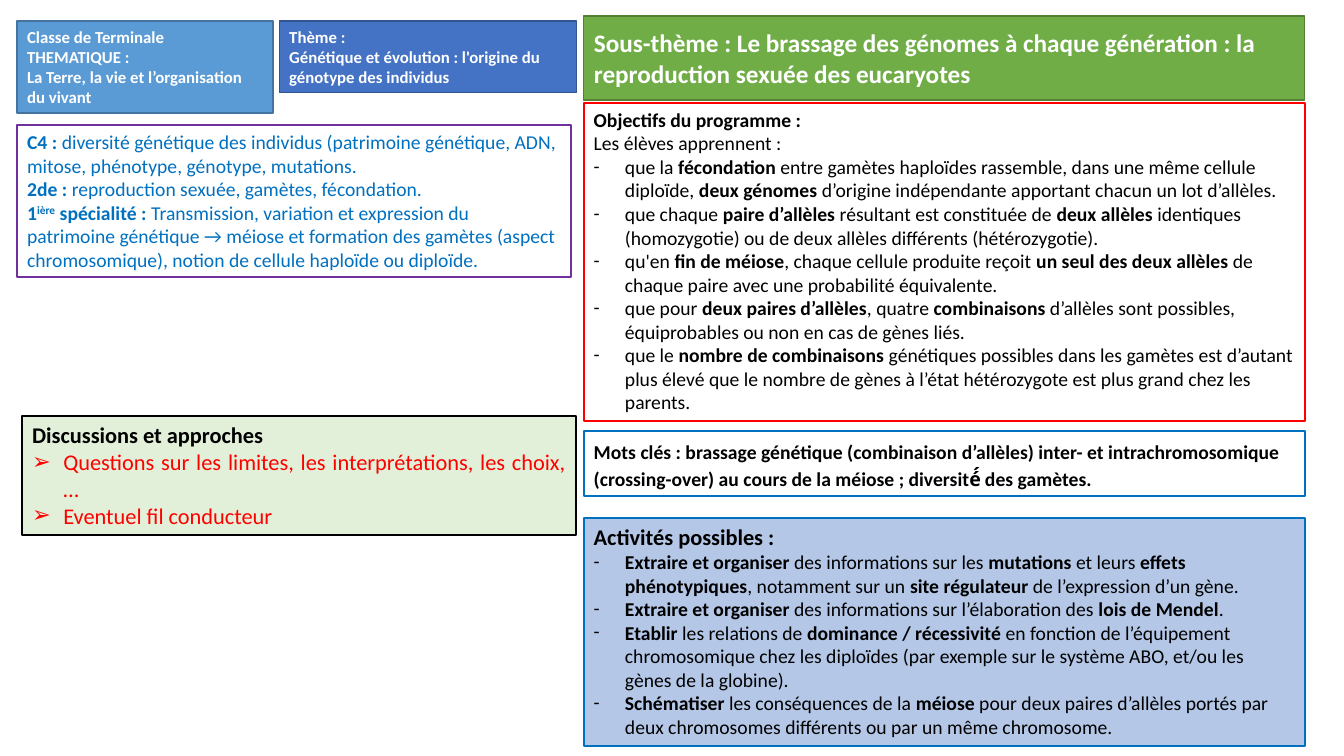
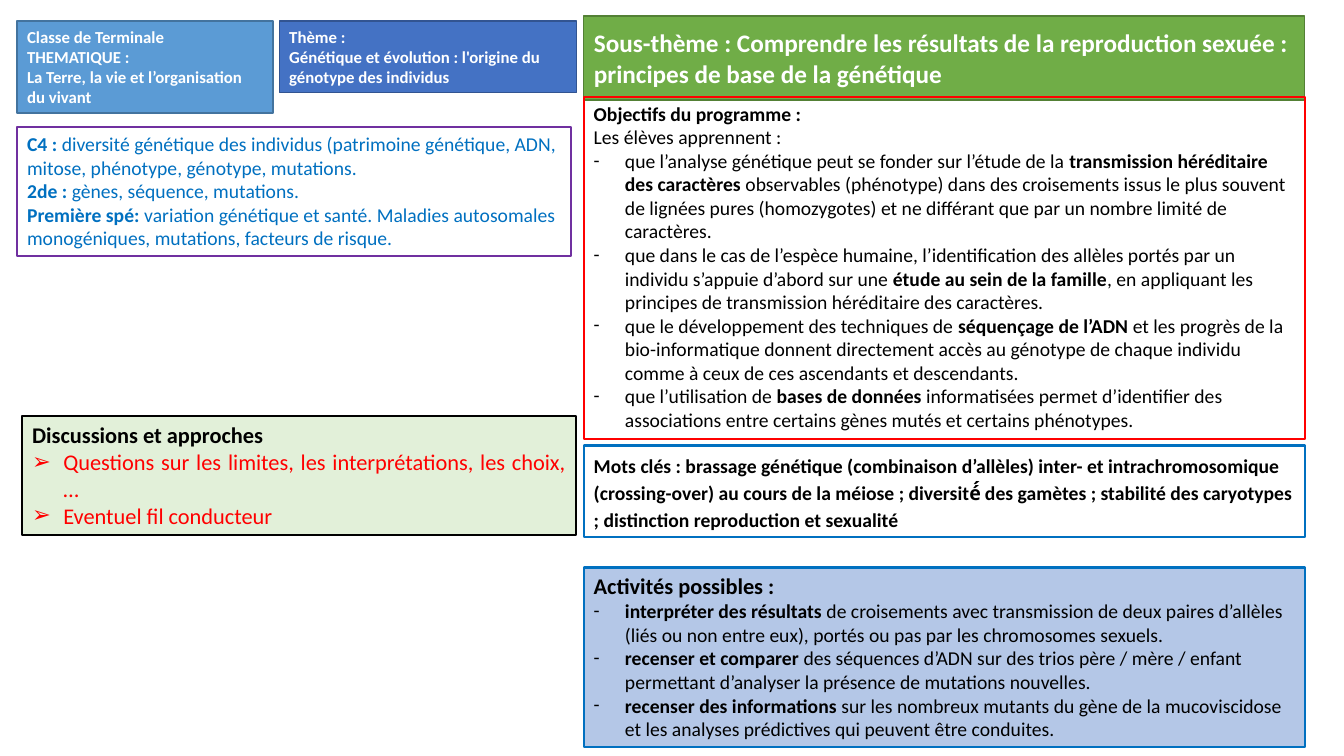
from pptx import Presentation
from pptx.dml.color import RGBColor
from pptx.enum.shapes import MSO_SHAPE
from pptx.enum.text import MSO_ANCHOR, MSO_AUTO_SIZE, PP_ALIGN
from pptx.oxml.ns import qn
from pptx.util import Inches, Pt
from lxml import etree

RECT = MSO_SHAPE.RECTANGLE
MIDDLE = MSO_ANCHOR.MIDDLE
TOP = MSO_ANCHOR.TOP
GROW = MSO_AUTO_SIZE.SHAPE_TO_FIT_TEXT
LEFT = PP_ALIGN.LEFT
FULL = PP_ALIGN.JUSTIFY

FONT = "Calibri"
RIGHT_X, RIGHT_W = 5.79, 7.15
LEFT_X, LEFT_W = 0.17, 5.49
INDENT = 0.31
BULLETS = ("- ", "➢ ")
COLORS = {
    "white": "FFFFFF", "black": "000000", "red": "FF0000",
    "sky": "5B9BD5", "sky edge": "43739E",
    "royal": "4472C4", "royal edge": "325491",
    "green": "70AD47", "green edge": "538035",
    "purple": "7030A0", "blue": "0070C0",
    "mint": "E2F0D9", "pale": "B4C7E7",
}

CLASS = ["*Classe de Terminale*", "*THEMATIQUE :*",
         "*La Terre, la vie et l’organisation du vivant*"]
THEME = ["*Thème :*",
         "*Génétique et évolution : l'origine du génotype des individus*"]
TALK = ["*Discussions et approches*",
        "➢ Questions sur les limites, les interprétations, les choix, …",
        "➢ Eventuel fil conducteur"]
GOALS = ["*Objectifs du programme :*", "Les élèves apprennent :"]
TASKS = "*Activités possibles :*"
CYCLE = ("*C4 : *diversité génétique des individus (patrimoine génétique, ADN, "
         "mitose, phénotype, génotype, mutations.")
KEYS = ("Mots clés : brassage génétique (combinaison d’allèles) inter- et "
        "intrachromosomique (crossing-over) au cours de la méiose ; "
        "diversité́ des gamètes")

PAGES = [
    {
        "title": "Sous-thème : Le brassage des génomes à chaque génération : "
                 "la reproduction sexuée des eucaryotes",
        "past": (1.24, 1.51, [
            CYCLE,
            "*2de : *reproduction sexuée, gamètes, fécondation.",
            "*1^ière^ spécialité : *Transmission, variation et expression du "
            "patrimoine génétique → méiose et formation des gamètes (aspect "
            "chromosomique), notion de cellule haploïde ou diploïde."]),
        "goals": (1.02, 3.16, [
            "- que la *fécondation* entre gamètes haploïdes rassemble, dans une "
            "même cellule diploïde, *deux génomes *d’origine indépendante "
            "apportant chacun un lot d’allèles.",
            "- que chaque *paire d’allèles *résultant est constituée de *deux "
            "allèles *identiques (homozygotie) ou de deux allèles différents "
            "(hétérozygotie).",
            "- qu'en *fin de méiose*, chaque cellule produite reçoit *un seul des "
            "deux allèles *de chaque paire avec une probabilité équivalente.",
            "- que pour *deux paires d’allèles*, quatre *combinaisons* d’allèles "
            "sont possibles, équiprobables ou non en cas de gènes liés.",
            "- que le *nombre de combinaisons *génétiques possibles dans les "
            "gamètes est d’autant plus élevé que le nombre de gènes à l’état "
            "hétérozygote est plus grand chez les parents."]),
        "keys": (4.28, 0.64, "."),
        "tasks": (5.14, 2.26, [
            "- *Extraire et organiser *des informations sur les *mutations* et "
            "leurs *effets phénotypiques*, notamment sur un *site régulateur *de "
            "l’expression d’un gène.",
            "- *Extraire et organiser *des informations sur l’élaboration des "
            "*lois de Mendel*.",
            "- *Etablir *les relations de *dominance / récessivité *en fonction de "
            "l’équipement chromosomique chez les diploïdes (par exemple sur le "
            "système ABO, et/ou les gènes de la globine).",
            "- *Schématiser* les conséquences de la *méiose* pour deux paires "
            "d’allèles portés par deux chromosomes différents ou par un même "
            "chromosome."]),
    },
    {
        "title": "Sous-thème : Comprendre les résultats de la reproduction "
                 "sexuée : principes de base de la génétique",
        "past": (1.26, 1.28, [
            CYCLE,
            "*2de : *gènes, séquence, mutations.",
            "*Première spé: *variation génétique et santé. Maladies autosomales "
            "monogéniques, mutations, facteurs de risque."]),
        "goals": (0.96, 3.4, [
            "- que l’analyse génétique peut se fonder sur l’étude de la "
            "*transmission héréditaire des caractères* observables (phénotype) "
            "dans des croisements issus le plus souvent de lignées pures "
            "(homozygotes) et ne différant que par un nombre limité de caractères.",
            "- que dans le cas de l’espèce humaine, l’identification des allèles "
            "portés par un individu s’appuie d’abord sur une *étude au sein de la "
            "famille*, en appliquant les principes de transmission héréditaire "
            "des caractères.",
            "- que le développement des techniques de *séquençage de l’ADN *et les "
            "progrès de la bio-informatique donnent directement accès au génotype "
            "de chaque individu comme à ceux de ces ascendants et descendants.",
            "- que l’utilisation de *bases de données *informatisées permet "
            "d’identifier des associations entre certains gènes mutés et certains "
            "phénotypes."]),
        "keys": (4.42, 0.91, " ; stabilité des caryotypes ; distinction "
                             "reproduction et sexualité"),
        "tasks": (5.63, 1.78, [
            "- *interpréter des résultats *de croisements avec transmission de "
            "deux paires d’allèles (liés ou non entre eux), portés ou pas par les "
            "chromosomes sexuels.",
            "- *recenser et comparer *des séquences d’ADN sur des trios père / "
            "mère / enfant permettant d’analyser la présence de mutations "
            "nouvelles.",
            "- *recenser des informations *sur les nombreux mutants du gène de la "
            "mucoviscidose et les analyses prédictives qui peuvent être "
            "conduites."]),
    },
]


def color(name):
    """Return the named colour."""
    return RGBColor.from_string(COLORS[name])


def bullet(para, mark):
    """Give a paragraph a hanging bullet."""
    props = para._p.get_or_add_pPr()
    props.set("marL", str(Inches(INDENT)))
    props.set("indent", str(-Inches(INDENT)))
    etree.SubElement(props, qn("a:buFont")).set("typeface", FONT)
    etree.SubElement(props, qn("a:buChar")).set("char", mark)


def add_runs(para, text, size, ink):
    """Write text where * toggles bold and ^ toggles superscript."""
    for i, part in enumerate(text.split("*")):
        for j, piece in enumerate(part.split("^")):
            if not piece:
                continue
            run = para.add_run()
            run.text = piece
            font = run.font
            font.name, font.size, font.bold = FONT, Pt(size), i % 2 == 1
            font.color.rgb = color(ink)
            if j % 2:
                run._r.get_or_add_rPr().set("baseline", "30000")


def write(frame, lines, size, ink, align=LEFT):
    """Fill a frame with one paragraph per line."""
    for i, line in enumerate(lines):
        para = frame.add_paragraph() if i else frame.paragraphs[0]
        para.alignment = align
        if line.startswith(BULLETS):
            bullet(para, line[0])
            line = line[2:]
        add_runs(para, line, size, ink)


def style(shape, at, fill, edge, width=1.5, anchor=TOP):
    """Place a shape, paint it and return its text frame."""
    shape.left, shape.top, shape.width, shape.height = map(Inches, at)
    if fill:
        shape.fill.solid()
        shape.fill.fore_color.rgb = color(fill)
    else:
        shape.fill.background()
    shape.line.color.rgb = color(edge)
    shape.line.width = Pt(width)
    frame = shape.text_frame
    frame.word_wrap = True
    frame.auto_size = GROW
    frame.vertical_anchor = anchor
    return frame


def add_box(slide, at, fill, edge, width=1.5, anchor=TOP):
    """Add a flat box and return its text frame."""
    shape = slide.shapes.add_shape(RECT, *map(Inches, at))
    shape.shadow.inherit = False
    return style(shape, at, fill, edge, width, anchor)


def add_head(slide, title):
    """Add the three title bands."""
    frame = style(slide.shapes.title, (RIGHT_X, 0.22, RIGHT_W, 0.71),
                  "green", "green edge", 1, MIDDLE)
    write(frame, [f"*{title}*"], 18, "white")
    bands = [(LEFT_X, 2.54, 0.91, "sky", CLASS), (2.77, 2.95, 0.71, "royal", THEME)]
    for x, wide, high, fill, lines in bands:
        frame = add_box(slide, (x, 0.21, wide, high), fill, f"{fill} edge", 1, MIDDLE)
        write(frame, lines, 12, "white")


def add_left(slide, page):
    """Add the earlier lessons and the talking points."""
    top, high, lines = page["past"]
    frame = add_box(slide, (LEFT_X, top, LEFT_W, high), None, "purple")
    write(frame, lines, 14, "blue")
    frame = add_box(slide, (0.22, 4.13, LEFT_W, 1.18), "mint", "black")
    write(frame, TALK, 16, "red", FULL)
    for run in frame.paragraphs[0].runs:
        run.font.color.rgb = color("black")


def add_right(slide, page):
    """Add the goals, the key words and the tasks."""
    top, high, lines = page["goals"]
    frame = add_box(slide, (RIGHT_X, top, RIGHT_W, high), None, "red")
    write(frame, GOALS + lines, 14, "black")

    top, high, end = page["keys"]
    frame = add_box(slide, (RIGHT_X, top, RIGHT_W, high), None, "blue")
    write(frame, [f"*{KEYS}{end}*"], 14, "black")
    para = frame.paragraphs[0]
    para.line_spacing, para.space_after = 1.15, Pt(10)

    top, high, lines = page["tasks"]
    frame = add_box(slide, (RIGHT_X, top, RIGHT_W, high), "pale", "blue")
    write(frame, [TASKS] + lines, 14, "black")
    for run in frame.paragraphs[0].runs:
        run.font.size = Pt(16)


def main():
    """Build and save the slides."""
    deck = Presentation()
    deck.slide_width, deck.slide_height = Inches(13.33), Inches(7.5)
    for page in PAGES:
        slide = deck.slides.add_slide(deck.slide_layouts[5])
        add_head(slide, page["title"])
        add_left(slide, page)
        add_right(slide, page)
    deck.save("out.pptx")


if __name__ == "__main__":
    main()
